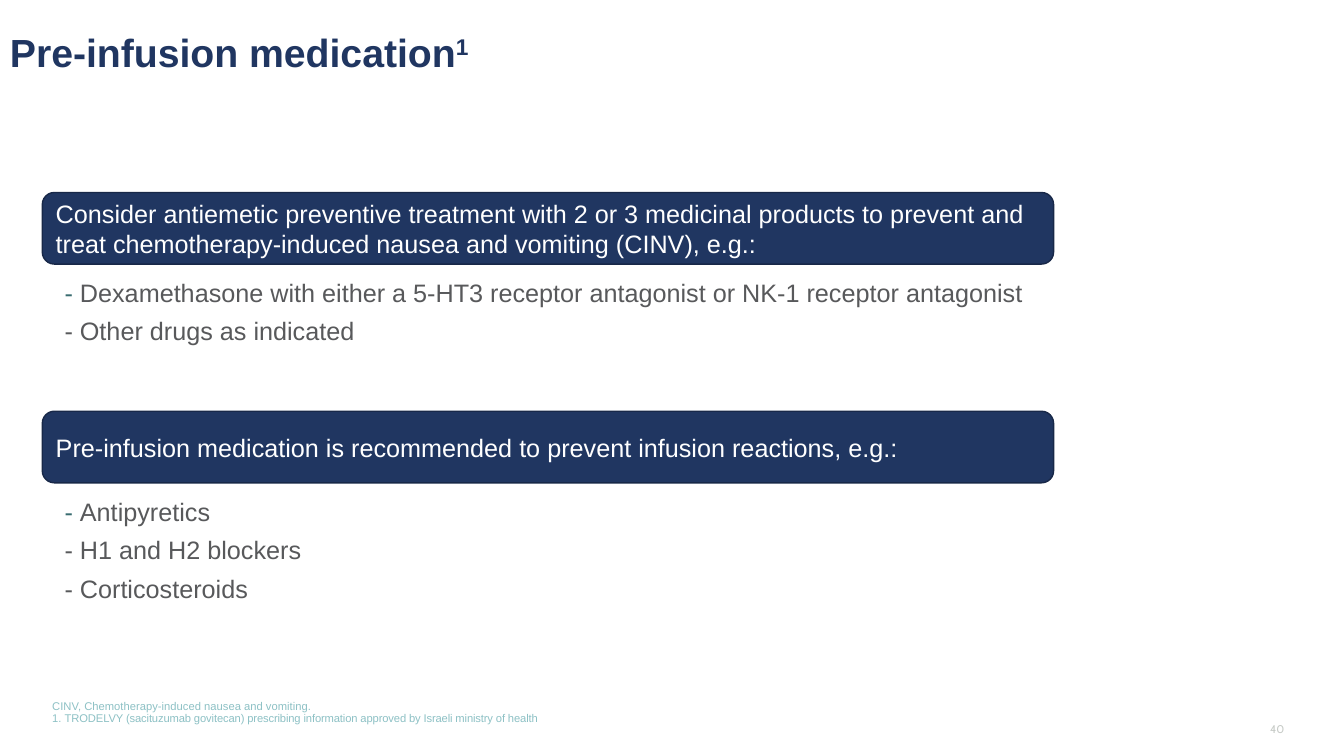
import pptx
import pptx.dml.color
import pptx.enum.shapes
import pptx.enum.text
import pptx.util

Inches = pptx.util.Inches
Pt = pptx.util.Pt
RGBColor = pptx.dml.color.RGBColor
Anchor = pptx.enum.text.MSO_ANCHOR

NAVY = RGBColor(0x20, 0x36, 0x61)
NAVY_EDGE = RGBColor(0x18, 0x28, 0x48)
TEAL = RGBColor(0x39, 0x6C, 0x70)
GREY = RGBColor(0x58, 0x59, 0x5B)
PALE_TEAL = RGBColor(0x8D, 0xC1, 0xC5)
PALE_GREY = RGBColor(0xC6, 0xCA, 0xC6)
WHITE = RGBColor(0xFF, 0xFF, 0xFF)

TITLE = "Pre-infusion medication"
TITLE_REFERENCE = "1"
SECTIONS = [
    ("Consider antiemetic preventive treatment with 2 or 3 medicinal products to prevent "
     "and treat chemotherapy-induced nausea and vomiting (CINV), e.g.:",
     ["Dexamethasone with either a 5-HT3 receptor antagonist or NK-1 receptor antagonist",
      "Other drugs as indicated"]),
    ("Pre-infusion medication is recommended to prevent infusion reactions, e.g.:",
     ["Antipyretics", "H1 and H2 blockers", "Corticosteroids"]),
]
ABBREVIATION = "CINV, Chemotherapy-induced nausea and vomiting."
REFERENCE_NUMBER = "1. "
REFERENCE = ("TRODELVY (sacituzumab govitecan) prescribing information "
             "approved by Israeli ministry of health")
PAGE_NUMBER = "40"

TITLE_FONT = {"name": "Arial", "size": Pt(28), "bold": True}
BODY_FONT = {"name": "Arial", "size": Pt(18)}
NOTE_FONT = {"name": "Arial", "size": Pt(8)}
PAGE_FONT = {"name": "Cabin", "size": Pt(8)}
TIGHT = {"line_spacing": 0.9}
SPACED = {"space_after": Pt(6)}

BANNER_LEFT, BANNER_TOP, BANNER_WIDTH, BANNER_HEIGHT = 0.42, 1.91, 10.03, 0.71
SECTION_STEP = 2.17
LIST_LEFT, LIST_WIDTH, LIST_OFFSET = 0.64, 9.81, 0.79
LIST_PADDING, LIST_LINE = 0.01, 0.39


def apply(target, values):
    for name, value in values.items():
        setattr(target, name, value)


def write(frame, lines, font, layout):
    for index, runs in enumerate(lines):
        paragraph = frame.add_paragraph() if index else frame.paragraphs[0]
        paragraph.alignment = pptx.enum.text.PP_ALIGN.LEFT
        apply(paragraph, layout)
        for text, color, extras in runs:
            run = paragraph.add_run()
            run.text = text
            apply(run.font, font)
            run.font.color.rgb = color
            for name, value in extras.items():
                run._r.get_or_add_rPr().set(name, value)


def add_text(slide, box, lines, font, layout, frame_format):
    frame = slide.shapes.add_textbox(*map(Inches, box)).text_frame
    apply(frame, {"word_wrap": True, **frame_format})
    write(frame, lines, font, layout)
    return frame


def add_section(slide, top, heading, items):
    banner = slide.shapes.add_shape(
        pptx.enum.shapes.MSO_SHAPE.ROUNDED_RECTANGLE,
        *map(Inches, (BANNER_LEFT, top, BANNER_WIDTH, BANNER_HEIGHT)))
    banner.shadow.inherit = False
    banner.fill.solid()
    banner.fill.fore_color.rgb = NAVY
    banner.line.color.rgb = NAVY_EDGE
    banner.line.width = Pt(1)
    apply(banner.text_frame, {"word_wrap": True, "vertical_anchor": Anchor.MIDDLE})
    write(banner.text_frame, [[(heading, WHITE, {})]], BODY_FONT, SPACED)

    lines = [[("- ", GREY if index else TEAL, {}), (item, GREY, {})]
             for index, item in enumerate(items)]
    height = LIST_PADDING + LIST_LINE * len(items)
    add_text(slide, (LIST_LEFT, top + LIST_OFFSET, LIST_WIDTH, height), lines,
             BODY_FONT, SPACED, {"margin_left": 0})


def main():
    presentation = pptx.Presentation()
    presentation.slide_width = Inches(13.33)
    presentation.slide_height = Inches(7.5)
    slide = presentation.slides.add_slide(presentation.slide_layouts[6])

    add_text(slide, (0, 0.01, 11.08, 0.79),
             [[(TITLE, NAVY, {}), (TITLE_REFERENCE, NAVY, {"baseline": "30000"})]],
             TITLE_FONT, TIGHT, {"vertical_anchor": Anchor.BOTTOM})

    for index, (heading, items) in enumerate(SECTIONS):
        add_section(slide, BANNER_TOP + index * SECTION_STEP, heading, items)

    footnotes = add_text(
        slide, (0.42, 6.66, 10.36, 0.58),
        [[(ABBREVIATION, PALE_TEAL, {})],
         [(REFERENCE_NUMBER, PALE_TEAL, {}), (REFERENCE, PALE_TEAL, {"spc": "-10"})]],
        NOTE_FONT, TIGHT, {"vertical_anchor": Anchor.BOTTOM})
    for paragraph in footnotes.paragraphs:
        properties = paragraph._p.get_or_add_pPr()
        properties.set("marL", str(Inches(0.07)))
        properties.set("indent", str(-Inches(0.07)))

    add_text(slide, (12.5, 7.17, 0.57, 0.13), [[(PAGE_NUMBER, PALE_GREY, {})]],
             PAGE_FONT, {}, {"vertical_anchor": Anchor.MIDDLE})

    presentation.save("out.pptx")


if __name__ == "__main__":
    main()
